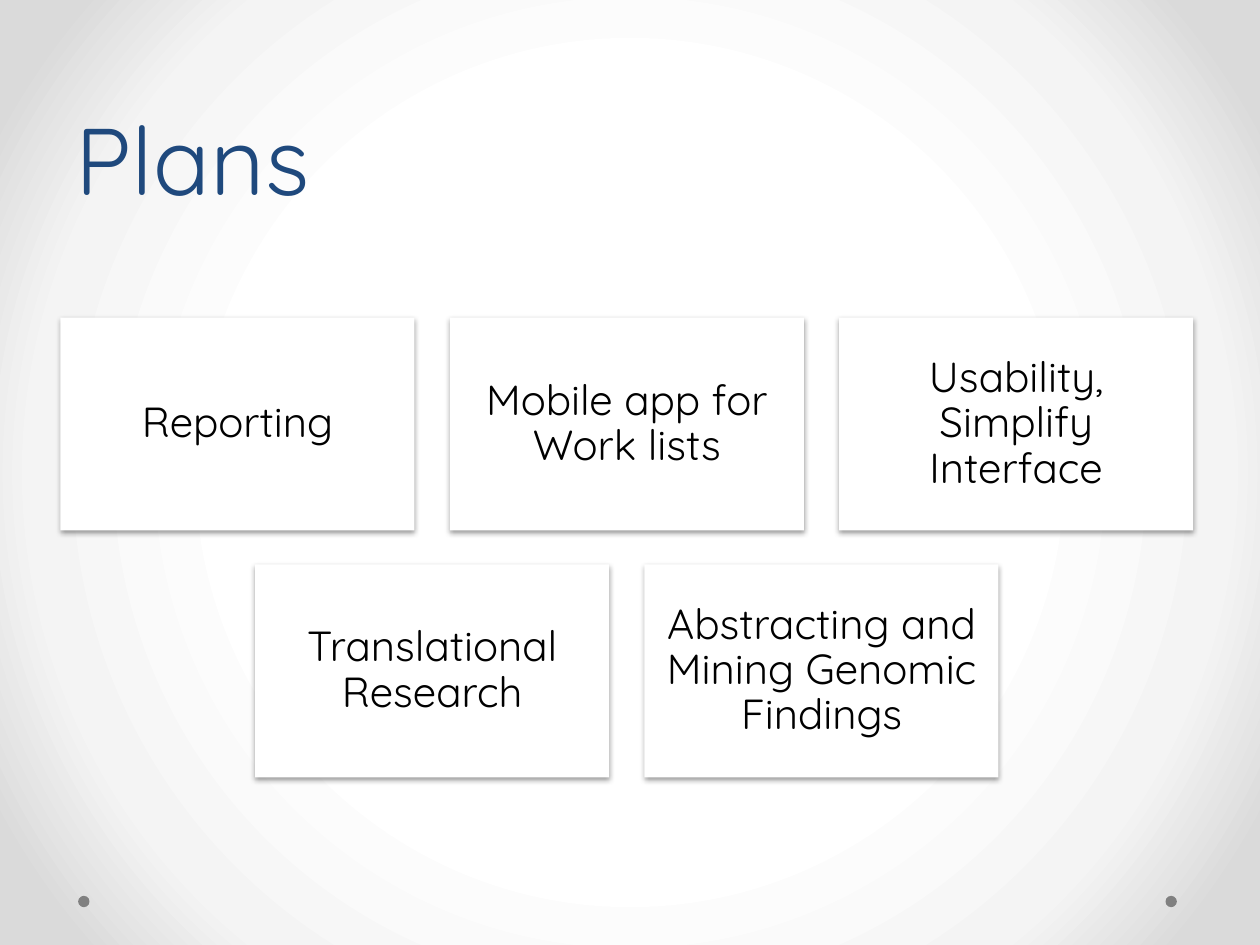
from pptx import Presentation
from pptx.dml.color import RGBColor
from pptx.enum.shapes import MSO_SHAPE
from pptx.enum.text import MSO_ANCHOR, MSO_AUTO_SIZE, PP_ALIGN
from pptx.oxml import parse_xml
from pptx.oxml.ns import nsdecls
from pptx.util import Inches, Pt


def color(value):
    return RGBColor.from_string(value)


class Deck:
    FONT = "Quicksand"
    TITLE, TEXT, CARD, DOT = "1F497D", "000000", "FFFFFF", "808080"
    STOPS = [(50, "FFFFFF"), (76, "F4F4F4"), (92, "DADADA")]
    LEFT, TOP = 0.48, 2.52
    COLUMN, ROW = 3.09, 1.96
    CARD_WIDTH, CARD_HEIGHT = 2.81, 1.69

    def __init__(self, presentation):
        self.slide = presentation.slides.add_slide(presentation.slide_layouts[5])

    def background(self):
        stops = "".join(
            f'<a:gs pos="{share * 1000}"><a:srgbClr val="{value}"/></a:gs>'
            for share, value in self.STOPS
        )
        self.slide.element.cSld.insert(0, parse_xml(
            f'<p:bg {nsdecls("p", "a")}><p:bgPr><a:gradFill rotWithShape="1">'
            f'<a:gsLst>{stops}</a:gsLst><a:path path="circle">'
            '<a:fillToRect l="50000" t="50000" r="50000" b="50000"/></a:path>'
            '</a:gradFill><a:effectLst/></p:bgPr></p:bg>'
        ))

    def style(self, paragraph, size, value, alignment, spacing):
        paragraph.alignment = alignment
        paragraph.line_spacing = spacing
        paragraph.font.name = self.FONT
        paragraph.font.size = Pt(size)
        paragraph.font.color.rgb = color(value)

    def title(self, text):
        shape = self.slide.shapes.title
        shape.left, shape.top = Inches(0.5), 0
        shape.width, shape.height = Inches(9), Inches(1.75)
        frame = shape.text_frame
        frame.text = text
        frame.auto_size = MSO_AUTO_SIZE.NONE
        frame.vertical_anchor = MSO_ANCHOR.BOTTOM
        self.style(frame.paragraphs[0], 54, self.TITLE, PP_ALIGN.LEFT, Pt(58))

    def shape(self, kind, left, top, width, height, fill):
        shape = self.slide.shapes.add_shape(
            kind, Inches(left), Inches(top), Inches(width), Inches(height))
        shape.shadow.inherit = False
        shape.fill.solid()
        shape.fill.fore_color.rgb = color(fill)
        shape.line.fill.background()
        return shape

    def dot(self, left):
        self.shape(MSO_SHAPE.OVAL, left, 7.11, 0.09, 0.09, self.DOT)

    def card(self, column, row, text):
        shape = self.shape(
            MSO_SHAPE.RECTANGLE,
            self.LEFT + column * self.COLUMN, self.TOP + row * self.ROW,
            self.CARD_WIDTH, self.CARD_HEIGHT, self.CARD)
        shape.element.spPr.find("{*}effectLst").append(parse_xml(
            f'<a:outerShdw {nsdecls("a")} blurRad="{Pt(3.1)}" dist="{Pt(1.6)}" '
            'dir="5400000" rotWithShape="0"><a:srgbClr val="000000">'
            '<a:alpha val="38000"/></a:srgbClr></a:outerShdw>'
        ))
        frame = shape.text_frame
        frame.word_wrap = True
        frame.vertical_anchor = MSO_ANCHOR.MIDDLE
        frame.margin_left = frame.margin_right = Inches(0.1)
        frame.margin_top = frame.margin_bottom = Inches(0.1)
        frame.text = text
        self.style(frame.paragraphs[0], 24, self.TEXT, PP_ALIGN.CENTER, 0.9)

    def cards(self, rows):
        columns = max(len(texts) for texts in rows)
        for row, texts in enumerate(rows):
            indent = (columns - len(texts)) / 2
            for column, text in enumerate(texts):
                self.card(column + indent, row, text)


def main():
    presentation = Presentation()
    presentation.slide_width, presentation.slide_height = Inches(10), Inches(7.5)
    deck = Deck(presentation)
    deck.background()
    for left in (9.25, 0.62):
        deck.dot(left)
    deck.title("Plans")
    deck.cards([
        ["Reporting", "Mobile app for Work lists", "Usability, Simplify Interface"],
        ["Translational Research", "Abstracting and Mining Genomic Findings"],
    ])
    presentation.save("out.pptx")


if __name__ == "__main__":
    main()
